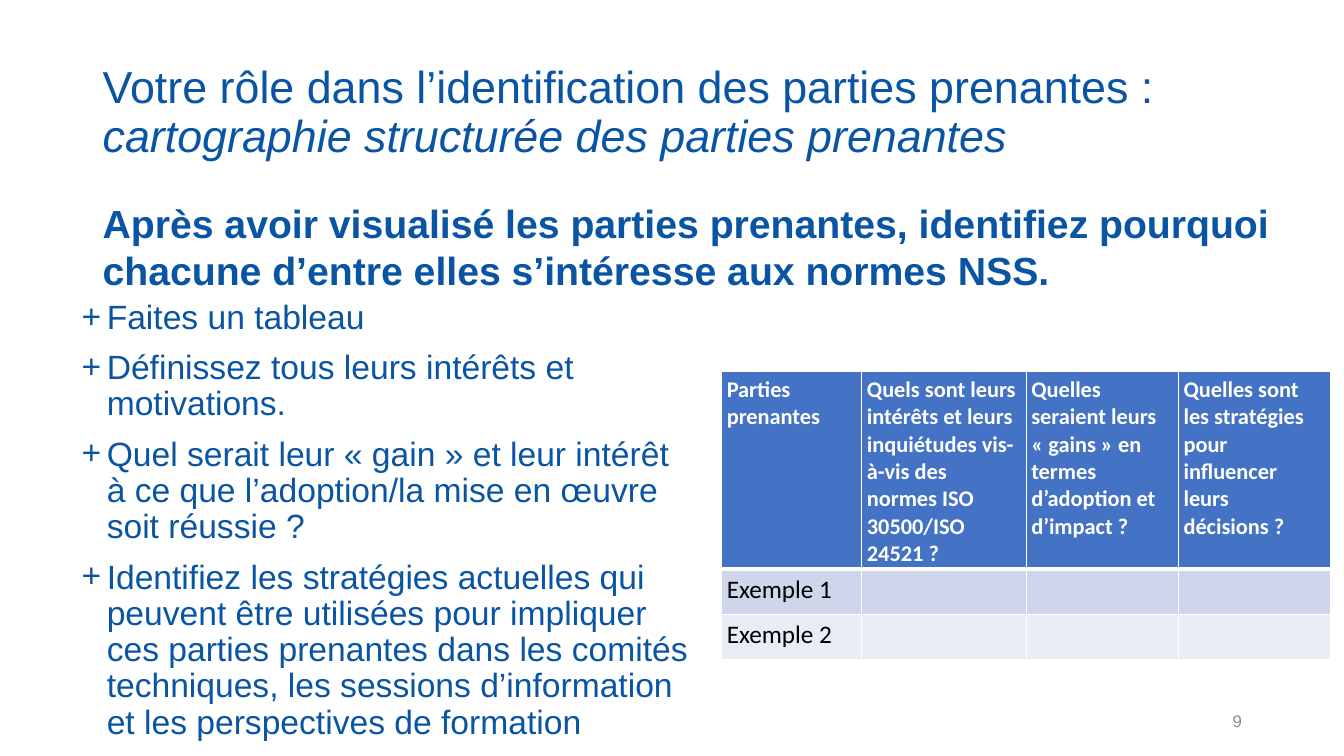
from lxml import etree
from pptx import Presentation
from pptx.dml.color import RGBColor
from pptx.enum.text import MSO_ANCHOR, PP_ALIGN
from pptx.oxml.ns import qn
from pptx.util import Inches, Pt

TOP, MIDDLE, RIGHT = MSO_ANCHOR.TOP, MSO_ANCHOR.MIDDLE, PP_ALIGN.RIGHT
WIDTH, HEIGHT = Inches(13.33), Inches(7.5)
BLUE, WHITE, BLACK, GREY = "0A55A3", "FFFFFF", "000000", "8C8C8C"
HEADER_FILL, BAND_FILLS = "4472C4", ("CFD5EA", "E9EBF5")

TITLE_FONT = dict(name="Arial", size=Pt(32), color=BLUE)
LEAD_FONT = dict(name="Arial", size=Pt(28), color=BLUE, bold=True)
BODY_FONT = dict(name="Arial", size=Pt(24), color=BLUE)
NUMBER_FONT = dict(name="Arial", size=Pt(12), color=GREY)
HEADER_FONT = dict(name="Calibri", size=Pt(16), color=WHITE, bold=True)
CELL_FONT = dict(name="Calibri", size=Pt(18), color=BLACK, bold=False)

LEAD = ("Après avoir visualisé les parties prenantes, identifiez pourquoi "
        "chacune d’entre elles s’intéresse aux normes NSS.")
STEPS = [
    "Faites un tableau",
    "Définissez tous leurs intérêts et motivations.",
    "Quel serait leur « gain » et leur intérêt à ce que l’adoption/la mise "
    "en œuvre soit réussie ?",
    "Identifiez les stratégies actuelles qui peuvent être utilisées pour "
    "impliquer ces parties prenantes dans les comités techniques, les "
    "sessions d’information et les perspectives de formation",
]
STAKEHOLDERS = [
    ["Parties prenantes",
     "Quels sont leurs intérêts et leurs inquiétudes vis-à-vis des normes "
     "ISO 30500/ISO 24521 ?",
     "Quelles seraient leurs « gains » en termes d’adoption et d’impact ?",
     "Quelles sont les stratégies pour influencer leurs décisions ?"],
    ["Exemple 1", "", "", ""],
    ["Exemple 2", "", "", ""],
]
COLUMN_SHARES = (10.43, 12.23, 11.33, 11.33)
ROW_SHARES = (24.93, 6, 6)


def rgb(value):
    return RGBColor.from_string(value)


def across(share):
    """Length for a percentage of the slide width."""
    return int(WIDTH * share / 100)


def down(share):
    """Length for a percentage of the slide height."""
    return int(HEIGHT * share / 100)


def add_run(p, text, font, **extra):
    r = p.add_run()
    r.text = text
    for key, value in {**font, **extra}.items():
        if key == "color":
            r.font.color.rgb = rgb(value)
        else:
            setattr(r.font, key, value)


def add_text_frame(s, left, top, width, height, anchor=TOP):
    box = s.shapes.add_textbox(across(left), down(top),
                               across(width), down(height))
    tf = box.text_frame
    tf.word_wrap = True
    tf.vertical_anchor = anchor
    return tf


def add_bullets(tf, items, mark, font):
    for i, item in enumerate(items):
        p = tf.add_paragraph() if i else tf.paragraphs[0]
        pPr = p._p.get_or_add_pPr()
        pPr.set("marL", str(Inches(0.25)))
        pPr.set("indent", str(-Inches(0.25)))
        etree.SubElement(pPr, qn("a:buFont"), typeface="Arial")
        etree.SubElement(pPr, qn("a:buChar"), char=mark)
        p.line_spacing = 0.9
        p.space_before = Pt(10 if i else 0)
        add_run(p, item, font)


def set_borders(cell, color, widths):
    tcPr = cell._tc.get_or_add_tcPr()
    for i, (side, width) in enumerate(widths.items()):
        ln = etree.Element(qn(f"a:ln{side}"), w=str(Pt(width)))
        fill = etree.SubElement(ln, qn("a:solidFill"))
        etree.SubElement(fill, qn("a:srgbClr"), val=color)
        tcPr.insert(i, ln)


def add_stakeholder_table(s, left, top, rows):
    table = s.shapes.add_table(
        len(rows), len(rows[0]), across(left), down(top),
        across(sum(COLUMN_SHARES)), down(sum(ROW_SHARES))).table
    for column, share in zip(table.columns, COLUMN_SHARES):
        column.width = across(share)
    for i, (row, share) in enumerate(zip(table.rows, ROW_SHARES)):
        row.height = down(share)
        fill = BAND_FILLS[(i - 1) % 2] if i else HEADER_FILL
        # The rule under the header is thicker than the others
        widths = dict(L=1, R=1, T=1 if i != 1 else 3, B=1 if i else 3)
        for cell, text in zip(row.cells, rows[i]):
            for side in ("left", "right", "top", "bottom"):
                setattr(cell, f"margin_{side}", Inches(0.05))
            cell.fill.solid()
            cell.fill.fore_color.rgb = rgb(fill)
            set_borders(cell, WHITE, widths)
            if text:
                add_run(cell.text_frame.paragraphs[0], text,
                        CELL_FONT if i else HEADER_FONT)


def main():
    prs = Presentation()
    prs.slide_width, prs.slide_height = WIDTH, HEIGHT
    s = prs.slides.add_slide(prs.slide_layouts[6])

    # Title
    p = add_text_frame(s, 6.9, 5.33, 86.25, 19.33, MIDDLE).paragraphs[0]
    p.line_spacing = 0.9
    add_run(p, "Votre rôle dans l’identification des parties prenantes :",
            TITLE_FONT)
    p.add_line_break()
    add_run(p, "cartographie structurée des parties prenantes",
            TITLE_FONT, italic=True)

    # Slide number
    p = add_text_frame(s, 70.65, 92.67, 22.5, 5.33, MIDDLE).paragraphs[0]
    p.alignment = RIGHT
    add_run(p, "9", NUMBER_FONT)

    # Steps and table
    steps = add_text_frame(s, 5.33, 39.07, 46.65, 56.93)
    add_bullets(steps, STEPS, "+", BODY_FONT)
    add_stakeholder_table(s, 53.7, 49.07, STAKEHOLDERS)

    # Lead sentence
    p = add_text_frame(s, 6.9, 25.73, 90.3, 13.87).paragraphs[0]
    add_run(p, LEAD, LEAD_FONT)

    prs.save("out.pptx")


if __name__ == "__main__":
    main()
